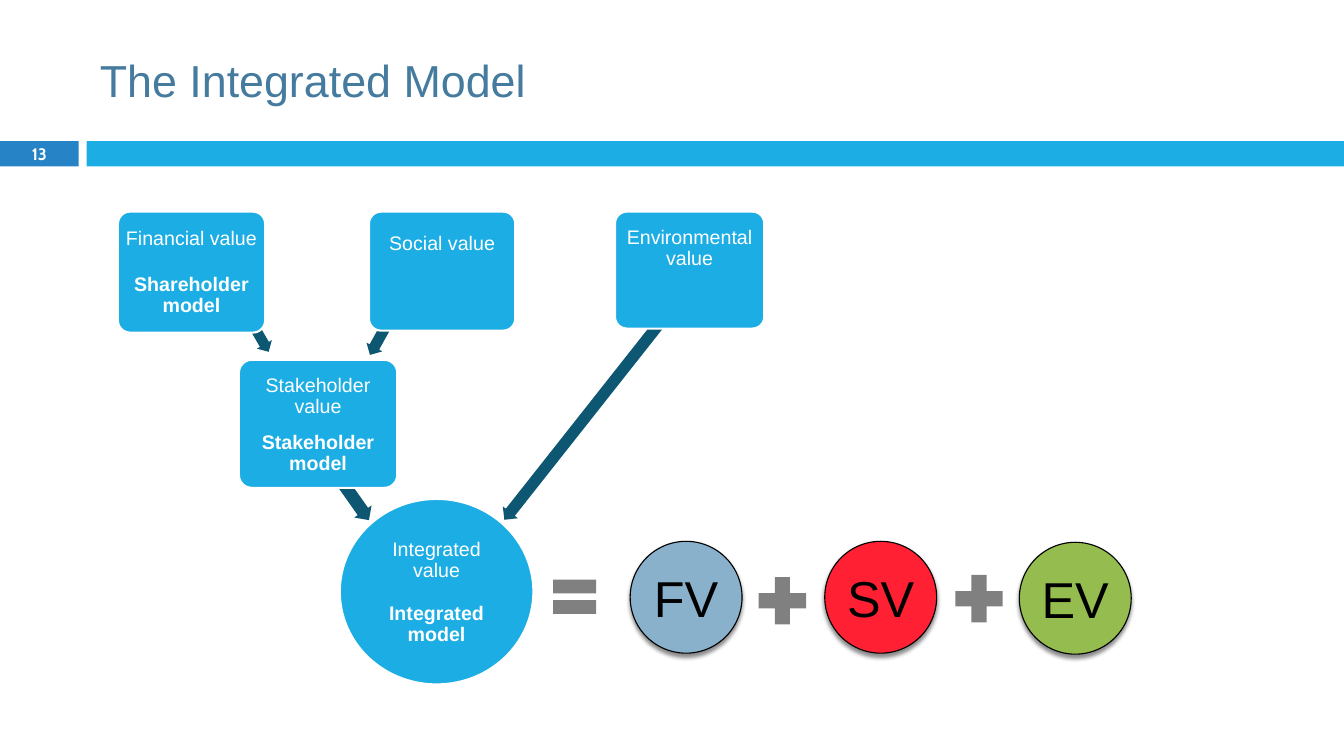
from lxml import etree
from pptx import Presentation
from pptx.dml.color import RGBColor
from pptx.enum.shapes import MSO_SHAPE
from pptx.enum.text import MSO_ANCHOR, PP_ALIGN
from pptx.oxml.ns import qn
from pptx.util import Inches, Pt

RECTANGLE = MSO_SHAPE.RECTANGLE
ROUNDED = MSO_SHAPE.ROUNDED_RECTANGLE
OVAL = MSO_SHAPE.OVAL
ARROW = MSO_SHAPE.LEFT_ARROW
PLUS = MSO_SHAPE.MATH_PLUS
EQUAL = MSO_SHAPE.MATH_EQUAL
TOP = MSO_ANCHOR.TOP
MIDDLE = MSO_ANCHOR.MIDDLE
CENTER = PP_ALIGN.CENTER
LEFT = PP_ALIGN.LEFT

BLUE = "1CADE4"
DARK_BLUE = "2683C6"
TEAL = "0E5772"
TITLE_BLUE = "457B9E"
GRAY = "808080"
WHITE = "FFFFFF"
BLACK = "000000"


def color(value):
    """Turn a hex string into a colour."""
    return RGBColor.from_string(value)


class ModelSlide:
    """Draw the elements of the value model in one style."""

    font = "Arial"

    def __init__(self, deck):
        """Add a title-only slide to the deck."""
        self.page = deck.slides.add_slide(deck.slide_layouts[5])

    def title(self, text, left, top, width, height):
        """Place and format the title."""
        box = self.page.shapes.title
        box.left, box.top = Inches(left), Inches(top)
        box.width, box.height = Inches(width), Inches(height)
        box.text_frame.vertical_anchor = MIDDLE
        box.text_frame.text = text
        para = box.text_frame.paragraphs[0]
        para.alignment = LEFT
        self.style(para, 32, TITLE_BLUE)

    def style(self, para, size, ink, bold=False, font=None):
        """Set the font of a paragraph."""
        para.font.name = font or self.font
        para.font.size = Pt(size)
        para.font.bold = bold
        para.font.color.rgb = color(ink)

    def shape(self, kind, left, top, width, height, fill, line=None, weight=1.5):
        """Add a filled shape with an optional outline."""
        shape = self.page.shapes.add_shape(
            kind, Inches(left), Inches(top), Inches(width), Inches(height))
        shape.shadow.inherit = False
        shape.fill.solid()
        shape.fill.fore_color.rgb = color(fill)
        if line:
            shape.line.color.rgb = color(line)
            shape.line.width = Pt(weight)
        else:
            shape.line.fill.background()
        return shape

    def frame(self, shape, side, top, anchor):
        """Prepare the text frame of a shape."""
        frame = shape.text_frame
        frame.word_wrap = True
        frame.vertical_anchor = anchor
        frame.margin_left = frame.margin_right = Inches(side)
        frame.margin_top, frame.margin_bottom = Inches(top), 0
        return frame

    def label(self, shape, text, size, ink, font=None, bold=False):
        """Write one centred line in a shape."""
        frame = self.frame(shape, 0, 0, MIDDLE)
        frame.text = text
        para = frame.paragraphs[0]
        para.alignment = CENTER
        self.style(para, size, ink, bold, font)

    def value(self, kind, left, top, width, height, lines, inset, gap):
        """Add a value box with the name of its model in bold."""
        shape = self.shape(kind, left, top, width, height, BLUE, WHITE)
        if kind == ROUNDED:
            shape.adjustments[0] = 0.1
        frame = self.frame(shape, 0.01, inset, TOP)
        frame.text = "\n".join(lines)
        for index, para in enumerate(frame.paragraphs):
            para.alignment = CENTER
            para.line_spacing = 0.9
            para.space_after = Pt(gap)
            self.style(para, 14, WHITE, bold=index > 0)

    def arrow(self, left, top, width, height, rotation):
        """Add a rotated block arrow."""
        shape = self.shape(ARROW, left, top, width, height, TEAL)
        shape.rotation = rotation
        shape.adjustments[0] = 0.6

    def term(self, text, left, top, fill):
        """Add a shadowed circle of the sum."""
        shape = self.shape(OVAL, left, top, 1.11, 1.11, fill, BLACK, 0.79)
        effects = shape._element.spPr.find(qn("a:effectLst"))
        shadow = etree.SubElement(
            effects, qn("a:outerShdw"), blurRad=str(Pt(3)), dist=str(Pt(2.4)),
            dir="5400000", rotWithShape="0")
        ink = etree.SubElement(shadow, qn("a:srgbClr"), val=BLACK)
        etree.SubElement(ink, qn("a:alpha"), val="45000")
        self.label(shape, text, 36, BLACK)


def main():
    """Build the slide and save it."""
    deck = Presentation()
    deck.slide_width, deck.slide_height = Inches(13.33), Inches(7.5)
    slide = ModelSlide(deck)

    number = slide.shape(RECTANGLE, 0, 1.4, 0.78, 0.25, DARK_BLUE)
    slide.label(number, "13", 11.9, WHITE, "Cabin", True)
    slide.shape(RECTANGLE, 0.86, 1.4, 12.47, 0.25, BLUE)
    slide.title("The Integrated Model", 0.89, 0.25, 11.89, 1.08)

    for arrow in (
        (2.84, 4.63, 1.04, 0.21, 234.8),
        (2.05, 3.05, 0.82, 0.17, 240),
        (3.51, 3.16, 0.62, 0.18, 299),
        (4.44, 3.9, 2.96, 0.19, 308.3),
    ):
        slide.arrow(*arrow)

    for value in (
        (OVAL, 3.37, 4.95, 1.92, 1.84, ["Integrated value", "Integrated model"], 0.13, 15.5),
        (ROUNDED, 2.37, 3.57, 1.57, 1.27, ["Stakeholder value", "Stakeholder model"], 0.12, 10.5),
        (ROUNDED, 1.17, 2.1, 1.46, 1.2, ["Financial value", "Shareholder model"], 0.13, 18),
        (ROUNDED, 3.66, 2.1, 1.45, 1.18, ["Social value"], 0.18, 0),
        (ROUNDED, 6.1, 2.1, 1.48, 1.16, ["Environmental value"], 0.12, 0),
    ):
        slide.value(*value)

    slide.shape(EQUAL, 5.41, 5.63, 0.58, 0.58, GRAY)
    for left, top in ((7.44, 5.64), (9.39, 5.62)):
        slide.shape(PLUS, left, top, 0.64, 0.64, GRAY)
    for term in (
        ("FV", 6.25, 5.37, "89B1CB"),
        ("SV", 8.18, 5.37, "FF2034"),
        ("EV", 10.11, 5.38, "95BC4E"),
    ):
        slide.term(*term)

    deck.save("out.pptx")


if __name__ == "__main__":
    main()
